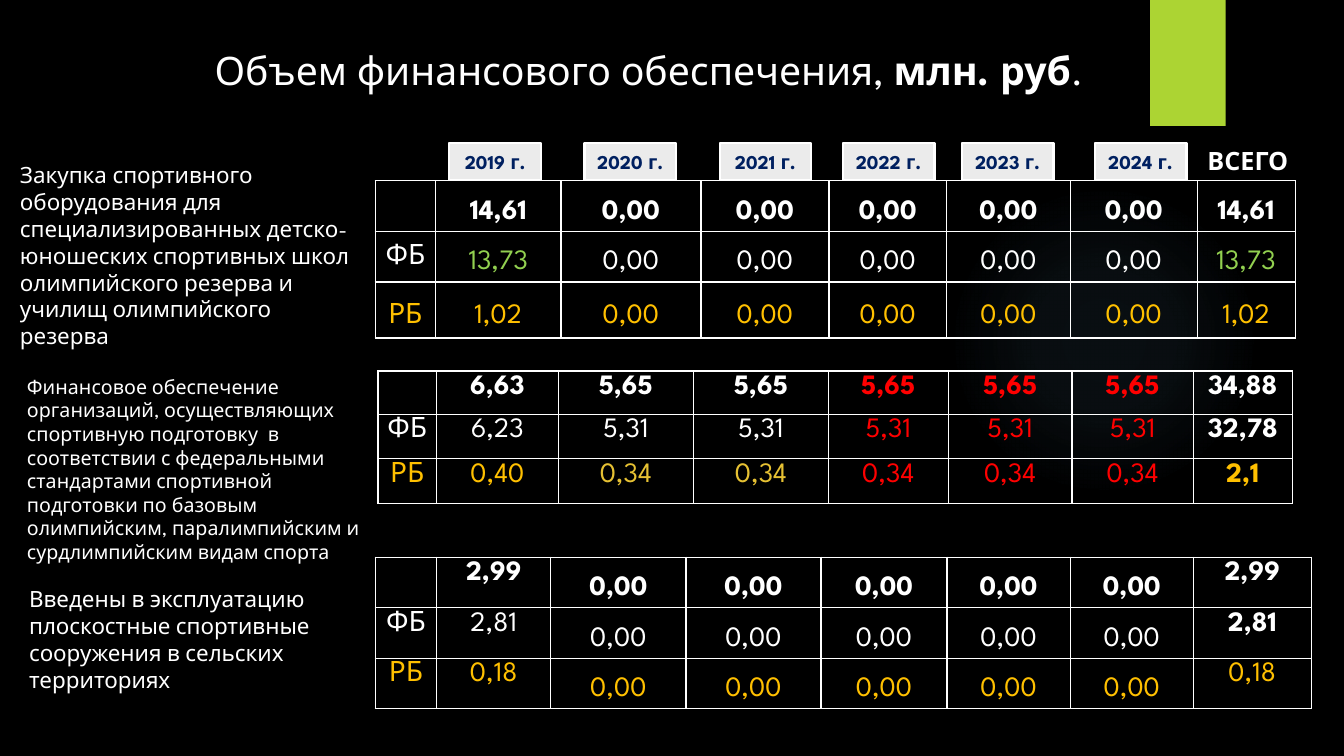
from lxml import etree
from pptx import Presentation
from pptx.dml.color import RGBColor
from pptx.enum.shapes import MSO_SHAPE
from pptx.enum.text import MSO_ANCHOR, MSO_AUTO_SIZE, PP_ALIGN
from pptx.oxml import parse_xml
from pptx.oxml.ns import qn
from pptx.util import Pt

RECTANGLE, OVAL = MSO_SHAPE.RECTANGLE, MSO_SHAPE.OVAL
TOP, MIDDLE = MSO_ANCHOR.TOP, MSO_ANCHOR.MIDDLE
CENTER = PP_ALIGN.CENTER
FIT_SHAPE = MSO_AUTO_SIZE.SHAPE_TO_FIT_TEXT
FONT = "League Spartan"
DRAWING = "http://schemas.openxmlformats.org/drawingml/2006/main"
WHITE = "FFFFFF"

STYLES = {
    "W": (WHITE, True), "w": (WHITE, False), "g": ("92D050", False),
    "R": ("FF0000", True), "r": ("FF0000", False),
    "Y": ("FFC000", True), "y": ("FFC000", False), "o": ("E6C133", False),
}
ANCHORS = {"m": (MIDDLE, 1.5), "t": (TOP, 1.15), "T": (TOP, 1.5)}

YEAR_LEFTS = {2019: 321, 2020: 417.5, 2021: 514, 2022: 602, 2023: 687, 2024: 782}

EQUIPMENT = dict(
    left=268, top=129, columns=[43.2, 89.5, 100, 91.5, 84, 88.5, 90.5, 70],
    rows=[
        (36.4, ["", "14,61"] + ["0,00"] * 5 + ["14,61"], "WWWWWWWW", "mmmmmmmm"),
        (35.7, ["ФБ", "13,73"] + ["0,00"] * 5 + ["13,73"], "wgwwwwwg", "Tmmmmmmm"),
        (40, ["РБ", "1,02"] + ["0,00"] * 5 + ["1,02"], "yyyyyyyy", "mmmmmmmm"),
    ])
TRAINING = dict(
    left=270, top=265, columns=[41.8, 87, 96.5, 96.5, 85.5, 88.5, 86.5, 71],
    rows=[
        (31, ["", "6,63"] + ["5,65"] * 5 + ["34,88"], "WWWWRRRW", "tttttttt"),
        (31.7, ["ФБ", "6,23"] + ["5,31"] * 5 + ["32,78"], "wwwwrrrW", "tttttttt"),
        (31.7, ["РБ", "0,40"] + ["0,34"] * 5 + ["2,1"], "yyoorrrY", "tttttttt"),
    ])
FACILITIES = dict(
    left=268, top=398, columns=[44, 81.5, 96.5, 96.5, 90, 88, 88, 84.2],
    rows=[
        (36, ["", "2,99"] + ["0,00"] * 5 + ["2,99"], "WWWWWWWW", "ttmmmmmt"),
        (36, ["ФБ", "2,81"] + ["0,00"] * 5 + ["2,81"], "wwwwwwwW", "ttmmmmmt"),
        (36, ["РБ", "0,18"] + ["0,00"] * 5 + ["0,18"], "yyyyyyyy", "ttmmmmmt"),
    ])


def color(hex_string):
    return RGBColor.from_string(hex_string)


def add_run(paragraph, text, size, hex_string=WHITE, bold=False):
    run = paragraph.add_run()
    run.text = text
    run.font.name = FONT
    run.font.size = Pt(size)
    run.font.bold = bold
    run.font.color.rgb = color(hex_string)


def add_box(slide, kind, left, top, width, height):
    shape = slide.shapes.add_shape(kind, Pt(left), Pt(top), Pt(width), Pt(height))
    shape.shadow.inherit = False
    return shape


def add_text(slide, left, top, width, height, size, runs, wrap=True):
    box = slide.shapes.add_textbox(Pt(left), Pt(top), Pt(width), Pt(height))
    frame = box.text_frame
    frame.word_wrap = wrap
    frame.auto_size = FIT_SHAPE
    for text, bold in runs:
        add_run(frame.paragraphs[0], text, size, bold=bold)


def add_backdrop(slide):
    slide.background.fill.solid()
    slide.background.fill.fore_color.rgb = color("000000")
    glow = add_box(slide, OVAL, 677.5, 132, 221.8, 221.8)
    glow.line.fill.background()
    stops = "".join(
        f'<a:gs pos="{position}000"><a:srgbClr val="7AC4F0">'
        f'<a:alpha val="{alpha}000"/></a:srgbClr></a:gs>'
        for position, alpha in [(0, 7), (36, 6), (69, 0), (100, 0)])
    gradient = parse_xml(
        f'<a:gradFill xmlns:a="{DRAWING}"><a:gsLst>{stops}</a:gsLst><a:path path="circle">'
        '<a:fillToRect l="50000" t="50000" r="50000" b="50000"/></a:path></a:gradFill>')
    glow._element.spPr.find(qn("a:prstGeom")).addnext(gradient)
    accent = add_box(slide, RECTANGLE, 821.5, 0, 54, 90)
    accent.fill.solid()
    accent.fill.fore_color.rgb = color("ACD433")
    accent.line.fill.background()


def add_year(slide, year, left, top, width, height):
    label = add_box(slide, RECTANGLE, left, top, width, height)
    label.fill.solid()
    label.fill.fore_color.rgb = color("EBEBEB")
    label.line.color.rgb = color(WHITE)
    label.line.width = Pt(1.5)
    label.text_frame.vertical_anchor = MIDDLE
    label.text_frame.word_wrap = True
    paragraph = label.text_frame.paragraphs[0]
    paragraph.alignment = CENTER
    add_run(paragraph, f"{year} г.", 14, "002060", True)


def add_borders(cell):
    properties = cell._tc.get_or_add_tcPr()
    for index, side in enumerate(("lnL", "lnR", "lnT", "lnB")):
        line = etree.Element(qn(f"a:{side}"), w=str(Pt(1)))
        fill = etree.SubElement(line, qn("a:solidFill"))
        etree.SubElement(fill, qn("a:srgbClr"), val=WHITE)
        properties.insert(index, line)


def fill_cell(cell, text, style, placement):
    cell.fill.background()
    cell.margin_left = cell.margin_right = Pt(1.5)
    cell.margin_top = cell.margin_bottom = 0
    cell.vertical_anchor, spacing = ANCHORS[placement]
    add_borders(cell)
    if text:
        paragraph = cell.text_frame.paragraphs[0]
        paragraph.alignment = CENTER
        paragraph.line_spacing = spacing
        add_run(paragraph, text, 20, *STYLES[style])


def add_funding_table(slide, left, top, columns, rows):
    height = sum(row[0] for row in rows)
    table = slide.shapes.add_table(
        len(rows), len(columns), Pt(left), Pt(top), Pt(sum(columns)), Pt(height)).table
    table.first_row = table.horz_banding = False
    for column, width in zip(table.columns, columns):
        column.width = Pt(width)
    for row, (row_height, texts, styles, placements) in zip(table.rows, rows):
        row.height = Pt(row_height)
        for cell, text, style, placement in zip(row.cells, texts, styles, placements):
            fill_cell(cell, text, style, placement)


def main():
    presentation = Presentation()
    presentation.slide_width, presentation.slide_height = Pt(960), Pt(540)
    slide = presentation.slides.add_slide(presentation.slide_layouts[6])
    add_backdrop(slide)
    add_text(slide, 7.2, 111.6, 257, 143.3, 16, [(
        "Закупка спортивного оборудования для специализированных детско-юношеских "
        "спортивных школ олимпийского резерва и училищ олимпийского резерва", False)])
    for year, left in YEAR_LEFTS.items():
        add_year(slide, year, left, 102.2, 65.5, 26.6)
    add_text(slide, 146.2, 29.5, 673.2, 41, 28, [
        ("Объем финансового обеспечения, ", False), ("млн. руб", True), (".", False)], wrap=False)
    add_funding_table(slide, **EQUIPMENT)
    add_text(slide, 12.2, 264.2, 260, 143.3, 14, [(
        "Финансовое обеспечение организаций, осуществляющих спортивную подготовку  в "
        "соответствии с федеральными стандартами спортивной подготовки по базовым "
        "олимпийским, паралимпийским и сурдлимпийским видам спорта", False)])
    add_funding_table(slide, **FACILITIES)
    add_text(slide, 13.7, 414.7, 265, 85, 16, [(
        "Введены в эксплуатацию плоскостные спортивные сооружения в сельских "
        "территориях", False)])
    add_funding_table(slide, **TRAINING)
    add_text(slide, 855.4, 100, 72.7, 28.8, 18, [("ВСЕГО", True)], wrap=False)
    presentation.save("out.pptx")


if __name__ == "__main__":
    main()
